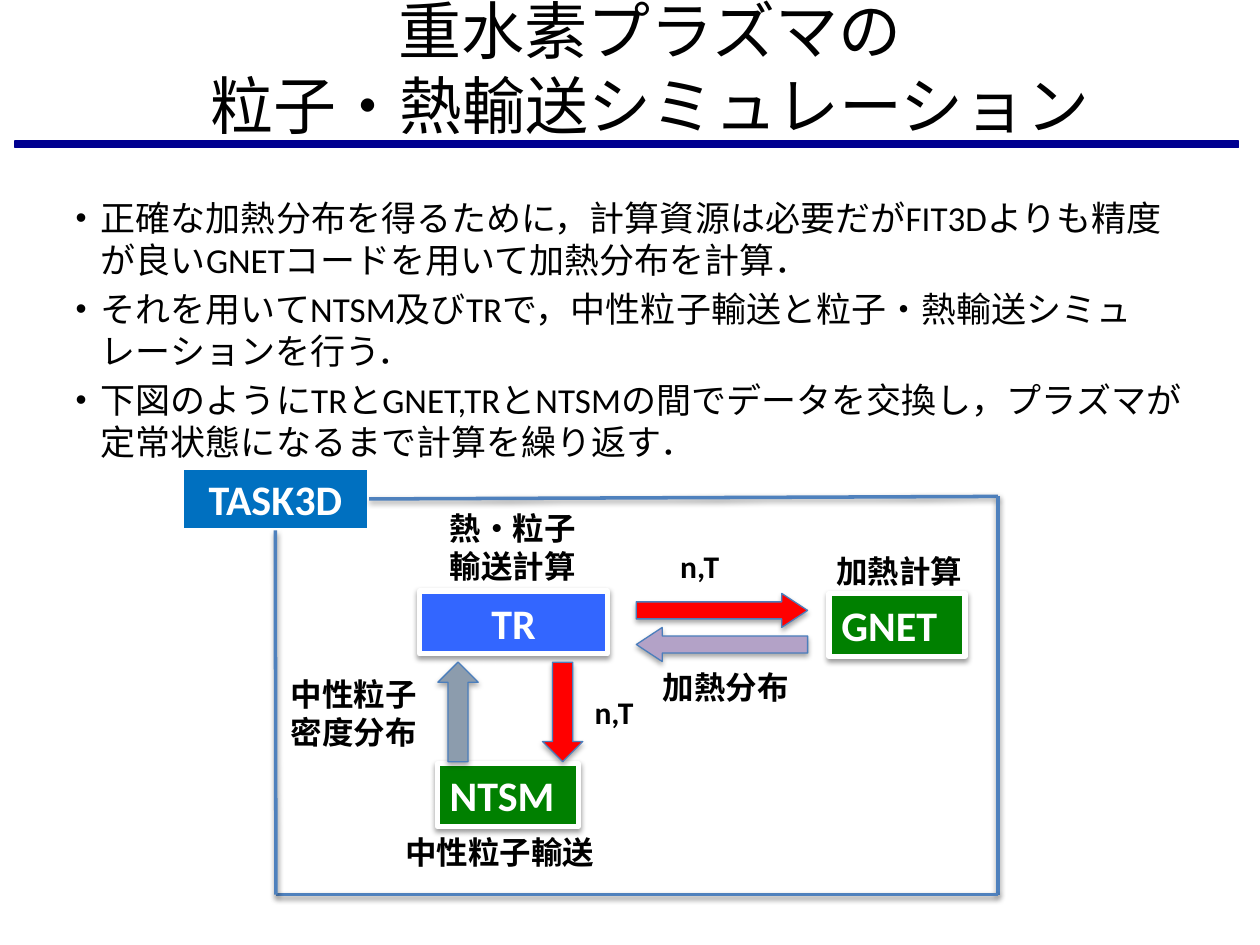
import pptx
import pptx.util
import pptx.dml.color
import pptx.enum.shapes
import pptx.enum.text
import pptx.oxml
import pptx.oxml.ns

Inches = pptx.util.Inches
Pt = pptx.util.Pt
MSO_SHAPE = pptx.enum.shapes.MSO_SHAPE
PP_ALIGN = pptx.enum.text.PP_ALIGN
MSO_ANCHOR = pptx.enum.text.MSO_ANCHOR
MSO_AUTO_SIZE = pptx.enum.text.MSO_AUTO_SIZE

BLACK, WHITE, NAVY = "000000", "FFFFFF", "000090"
RED, GREEN, FRAME, ARROW_EDGE = "FF0000", "008000", "4F81BD", "4B7EBC"

BULLETS = [
    "正確な加熱分布を得るために，計算資源は必要だがFIT3Dよりも精度が良いGNETコードを用いて加熱分布を計算．",
    "それを用いてNTSM及びTRで，中性粒子輸送と粒子・熱輸送シミュレーションを行う．",
    "下図のようにTRとGNET,TRとNTSMの間でデータを交換し，プラズマが定常状態になるまで計算を繰り返す．",
]
LABELS = [
    ("n,T", 5.3, 4.29, 0.75, 0.4),
    ("熱・粒子輸送計算", 3.47, 3.99, 1.27, 0.71),
    ("加熱分布", 5.16, 5.25, 1.25, 0.4),
    ("加熱計算", 6.54, 4.33, 1.38, 0.4),
    ("n,T", 4.62, 5.45, 1.49, 0.4),
    ("中性粒子密度分布", 2.21, 5.31, 1.27, 0.71),
    ("中性粒子輸送", 3.12, 6.56, 2.04, 0.4),
]


def rgb(color):
    return pptx.dml.color.RGBColor.from_string(color)


def place(s, left, top, width, height):
    s.left, s.top = Inches(left), Inches(top)
    s.width, s.height = Inches(width), Inches(height)


def format_text(tf, font, size, color, bold=False, align=None):
    tf.word_wrap = True
    for p in tf.paragraphs:
        p.alignment = align
        for r in p.runs:
            r.font.name, r.font.size, r.font.bold = font, Pt(size), bold
            r.font.color.rgb = rgb(color)


def set_shadow(s, alpha=None, distance=1.6):
    """Give the shape a soft downward shadow, or none without alpha."""
    spPr = s._element.spPr
    for old in spPr.findall(pptx.oxml.ns.qn("a:effectLst")):
        spPr.remove(old)
    effect = ""
    if alpha:
        effect = (
            f'<a:outerShdw blurRad="{Pt(3.1)}" dist="{Pt(distance)}" dir="5400000" rotWithShape="0">'
            f'<a:srgbClr val="{BLACK}"><a:alpha val="{alpha * 1000}"/></a:srgbClr></a:outerShdw>'
        )
    spPr.append(pptx.oxml.parse_xml(
        f'<a:effectLst {pptx.oxml.ns.nsdecls("a")}>{effect}</a:effectLst>'))


def add_filled(sl, kind, box, fill, line, line_width):
    s = sl.shapes.add_shape(kind, *map(Inches, box))
    s.fill.solid()
    s.fill.fore_color.rgb = rgb(fill)
    s.line.color.rgb = rgb(line)
    s.line.width = Pt(line_width)
    set_shadow(s)
    return s


def add_code_box(sl, text, box, fill, align=PP_ALIGN.CENTER, shadow=38):
    s = add_filled(sl, MSO_SHAPE.RECTANGLE, box, fill, WHITE, 3)
    set_shadow(s, shadow)
    tf = s.text_frame
    tf.text = text
    tf.vertical_anchor = MSO_ANCHOR.TOP
    tf.auto_size = MSO_AUTO_SIZE.SHAPE_TO_FIT_TEXT
    format_text(tf, "Calibri", 24, WHITE, True, align)
    return s


def add_arrow(sl, box, fill, rotation=0, head=0.5):
    s = add_filled(sl, MSO_SHAPE.RIGHT_ARROW, box, fill, ARROW_EDGE, 0.75)
    s.adjustments[1] = head
    s.rotation = rotation
    set_shadow(s, 35, 1.8)


def add_label(sl, text, *box):
    s = sl.shapes.add_textbox(*map(Inches, box))
    s.text_frame.text = text
    s.text_frame.auto_size = MSO_AUTO_SIZE.SHAPE_TO_FIT_TEXT
    format_text(s.text_frame, "Calibri", 18, BLACK, True)


def add_line(sl, start, end):
    c = sl.shapes.add_connector(pptx.enum.shapes.MSO_CONNECTOR.STRAIGHT,
                                *map(Inches, start + end))
    c.line.color.rgb = rgb(FRAME)
    c.line.width = Pt(2)
    set_shadow(c, 38)
    return c


def add_title(sl):
    s = sl.shapes.title
    place(s, 0.26, -0.01, 9.8, 1.08)
    tf = s.text_frame
    tf.text = "重水素プラズマの\v粒子・熱輸送シミュレーション"
    tf.auto_size = MSO_AUTO_SIZE.NONE
    tf.vertical_anchor = MSO_ANCHOR.MIDDLE
    format_text(tf, "Arial", 36, BLACK, align=PP_ALIGN.CENTER)


def add_bullets(sl):
    s = sl.placeholders[1]
    place(s, 0.5, 1.51, 9, 5.19)
    tf = s.text_frame
    tf.text = "\n".join(BULLETS)
    tf.auto_size = MSO_AUTO_SIZE.NONE
    for i, p in enumerate(tf.paragraphs):
        pPr = p._p.get_or_add_pPr()
        pPr.set("marL", str(Inches(0.2)))
        pPr.set("indent", str(Inches(-0.2)))
        p.space_before = Pt(4 if i else 0)
        for tag, value in (('buSzPct', '90000'), ('buChar', '•')):
            name = "char" if tag == "buChar" else "val"
            pPr.append(pptx.oxml.parse_xml(
                f'<a:{tag} {pptx.oxml.ns.nsdecls("a")} {name}="{value}"/>'))
    format_text(tf, "Calibri", 20, BLACK)


def add_frame(sl, task):
    """Draw the outline that runs clockwise from the task box back to it."""
    left, right, top, bottom = 2.19, 7.92, 3.94, 7.1
    add_line(sl, (2.93, 3.96), (right, top)).begin_connect(task, 3)
    add_line(sl, (right, top), (right, bottom))
    add_line(sl, (right, bottom), (left, bottom))
    add_line(sl, (left, bottom), (left, 4.21)).end_connect(task, 2)


def main():
    prs = pptx.Presentation()
    prs.slide_width, prs.slide_height = Inches(10), Inches(7.5)
    sl = prs.slides.add_slide(prs.slide_layouts[1])
    add_title(sl)
    add_bullets(sl)
    add_filled(sl, MSO_SHAPE.RECTANGLE, (0.12, 1.12, 9.71, 0.05), NAVY, NAVY, 0.75)

    add_code_box(sl, "NTSM", (3.47, 6.06, 1.12, 0.5), GREEN, PP_ALIGN.LEFT)
    add_code_box(sl, "TR", (3.33, 4.69, 1.49, 0.5), "3366FF")
    add_code_box(sl, "GNET", (6.58, 4.71, 1.08, 0.5), GREEN, PP_ALIGN.LEFT)
    task = add_code_box(sl, "TASK3D", (1.44, 3.71, 1.49, 0.5), "0070C0", shadow=None)

    add_arrow(sl, (4.07, 5.49, 0.79, 0.32), RED, 90)
    add_arrow(sl, (3.24, 5.49, 0.79, 0.32), "8C9CAD", 270)
    add_arrow(sl, (5.05, 4.71, 1.36, 0.27), RED, head=0.76)
    add_arrow(sl, (5.05, 4.98, 1.36, 0.27), "B3A2C7", 180, 0.76)
    for label in LABELS:
        add_label(sl, *label)
    add_frame(sl, task)
    prs.save("out.pptx")


if __name__ == "__main__":
    main()
